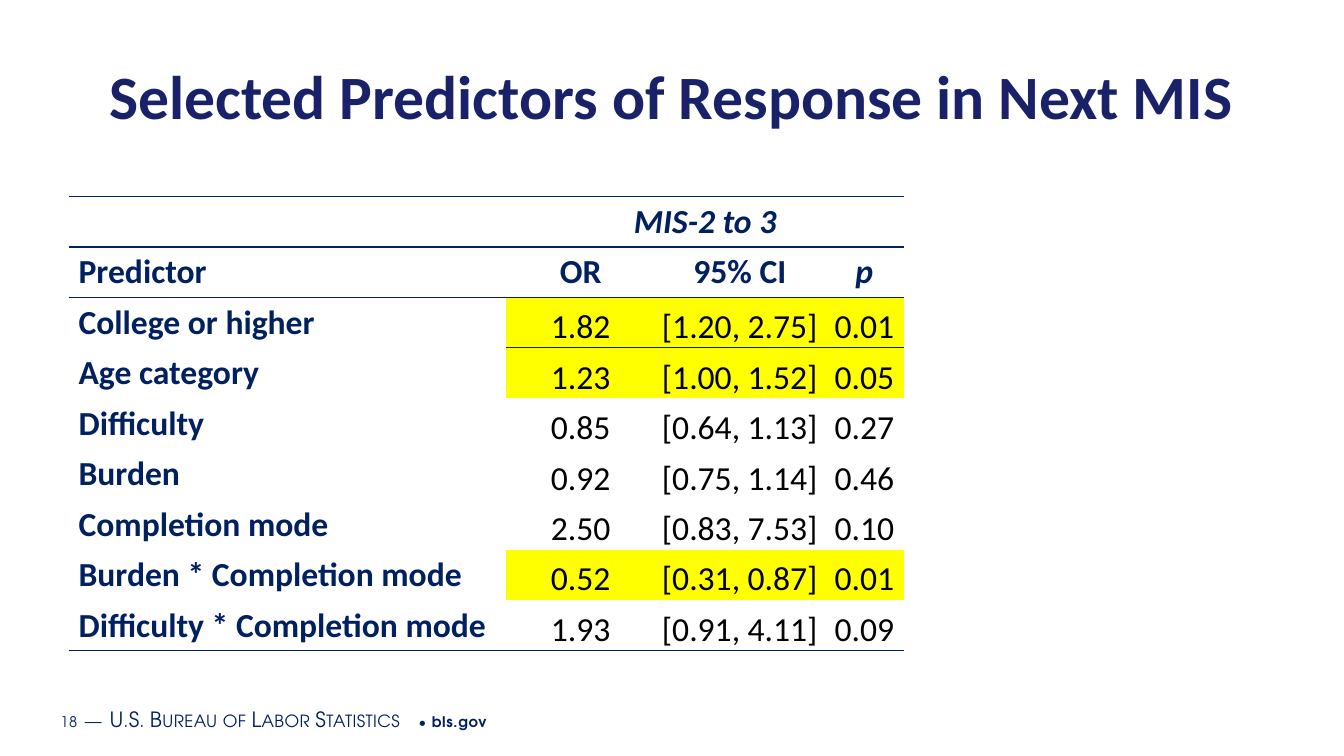
import pptx
import pptx.dml.color
import pptx.enum.text
import pptx.oxml
import pptx.oxml.ns
import pptx.util

COLORS = {"title": "192168", "navy": "002060", "black": "000000",
          "white": "FFFFFF", "highlight": "FFFF00"}
BODY_FONT = "Calibri"
FOOTER_FONT = "TeX Gyre Adventor"
SLIDE_WIDTH = pptx.util.Inches(13.33)
SLIDE_HEIGHT = pptx.util.Inches(7.5)
GRID_COLUMNS, GRID_ROWS = 160, 90
PLAIN_TABLE_STYLE = "{2D5ABB26-0587-4C30-8999-92F81FD0307C}"
CENTER = pptx.enum.text.PP_ALIGN.CENTER
MIDDLE = pptx.enum.text.MSO_ANCHOR.MIDDLE
BOTTOM = pptx.enum.text.MSO_ANCHOR.BOTTOM

PREDICTORS = [
    ("College or higher", "1.82", "[1.20, 2.75]", "0.01", True),
    ("Age category", "1.23", "[1.00, 1.52]", "0.05", True),
    ("Difficulty", "0.85", "[0.64, 1.13]", "0.27", False),
    ("Burden", "0.92", "[0.75, 1.14]", "0.46", False),
    ("Completion mode", "2.50", "[0.83, 7.53]", "0.10", False),
    ("Burden * Completion mode", "0.52", "[0.31, 0.87]", "0.01", True),
    ("Difficulty * Completion mode", "1.93", "[0.91, 4.11]", "0.09", False),
]


def across(columns):
    return round(SLIDE_WIDTH * columns / GRID_COLUMNS)


def down(rows):
    return round(SLIDE_HEIGHT * rows / GRID_ROWS)


def place(box):
    left, top, width, height = box
    return across(left), down(top), across(width), down(height)


def rgb(name):
    return pptx.dml.color.RGBColor.from_string(COLORS[name])


def set_font(font, size, color, name=BODY_FONT, bold=False, italic=False):
    font.size = pptx.util.Pt(size)
    font.color.rgb = rgb(color)
    font.name = name
    font.bold = bold
    font.italic = italic


def set_border(cell, side, color):
    namespace = pptx.oxml.ns.nsdecls("a")
    cell._tc.get_or_add_tcPr().append(pptx.oxml.parse_xml(
        f'<a:{side} {namespace} w="12700"><a:solidFill>'
        f'<a:srgbClr val="{COLORS[color]}"/></a:solidFill></a:{side}>'))


def add_title(slide, box):
    title = slide.shapes.title
    title.left, title.top, title.width, title.height = place(box)
    frame = title.text_frame
    frame.text = "Selected Predictors of Response in Next MIS"
    frame.vertical_anchor = MIDDLE
    frame.auto_size = pptx.enum.text.MSO_AUTO_SIZE.NONE
    paragraph = frame.paragraphs[0]
    paragraph.alignment = CENTER
    set_font(paragraph.font, 44, "title", bold=True)


def fill_cell(cell, text, row, column, last_row, highlighted):
    is_header = row < 2
    is_label = column == 0
    if is_header or row == 2:
        set_border(cell, "lnT", "navy")
    elif is_label:
        set_border(cell, "lnT", "white")
    if is_header or row == last_row:
        set_border(cell, "lnB", "navy")
    elif is_label:
        set_border(cell, "lnB", "white")

    is_value = not (is_header or is_label)
    if is_value and highlighted:
        cell.fill.solid()
        cell.fill.fore_color.rgb = rgb("highlight")
    else:
        cell.fill.background()
    if is_value:
        cell.vertical_anchor = BOTTOM
        cell.margin_left = cell.margin_right = pptx.util.Inches(0.01)
        cell.margin_top = pptx.util.Inches(0.01)
        cell.margin_bottom = 0
    cell.text = text
    paragraph = cell.text_frame.paragraphs[0]
    if not is_label:
        paragraph.alignment = CENTER
    set_font(paragraph.font, 24, "black" if is_value else "navy",
             bold=not is_value, italic=text in ("MIS-2 to 3", "p"))


def add_predictor_table(slide, box, column_widths):
    rows = [("", "MIS-2 to 3", "", "", False),
            ("Predictor", "OR", "95% CI", "p", False)] + PREDICTORS
    frame = slide.shapes.add_table(len(rows), len(column_widths), *place(box))
    table = frame.table
    table.first_row = False
    table.horz_banding = False
    style = table._tbl.tblPr.find(pptx.oxml.ns.qn("a:tableStyleId"))
    style.text = PLAIN_TABLE_STYLE
    for column, width in zip(table.columns, column_widths):
        column.width = across(width)
    for row, (*texts, highlighted) in enumerate(rows):
        table.rows[row].height = down(box[3] / len(rows))
        for column, text in enumerate(texts):
            fill_cell(table.cell(row, column), text, row, column,
                      len(rows) - 1, highlighted)
    table.cell(0, 1).merge(table.cell(0, 3))


def add_footer(slide, box):
    frame = slide.shapes.add_textbox(*place(box)).text_frame
    frame.word_wrap = True
    frame.vertical_anchor = MIDDLE
    frame.margin_left = frame.margin_right = pptx.util.Inches(0.07)
    frame.margin_top = frame.margin_bottom = pptx.util.Inches(0.04)
    paragraph = frame.paragraphs[0]
    parts = [("18", 10.5, False), (" ", 16, False), ("—", 15, True),
             (" ", 16, False), ("U.S. Bureau of Labor Statistics", 15, True),
             (" • ", 10.5, False), ("bls.gov", 10.5, False)]
    for text, size, small_caps in parts:
        run = paragraph.add_run()
        run.text = text
        set_font(run.font, size, "navy", FOOTER_FONT, bold=text == "bls.gov")
        properties = run._r.get_or_add_rPr()
        properties.set("spc", "30" if small_caps else "50")
        if small_caps:
            properties.set("cap", "small")


def main():
    presentation = pptx.Presentation()
    presentation.slide_width = SLIDE_WIDTH
    presentation.slide_height = SLIDE_HEIGHT
    slide = presentation.slides.add_slide(presentation.slide_layouts[5])
    add_footer(slide, (6.36, 83.16, 101.64, 4.8))
    add_title(slide, (6.48, 6, 147, 10.56))
    add_predictor_table(slide, (8.16, 23.4, 99.48, 54),
                        (52.08, 17.76, 20.16, 9.48))
    presentation.save("out.pptx")


if __name__ == "__main__":
    main()
